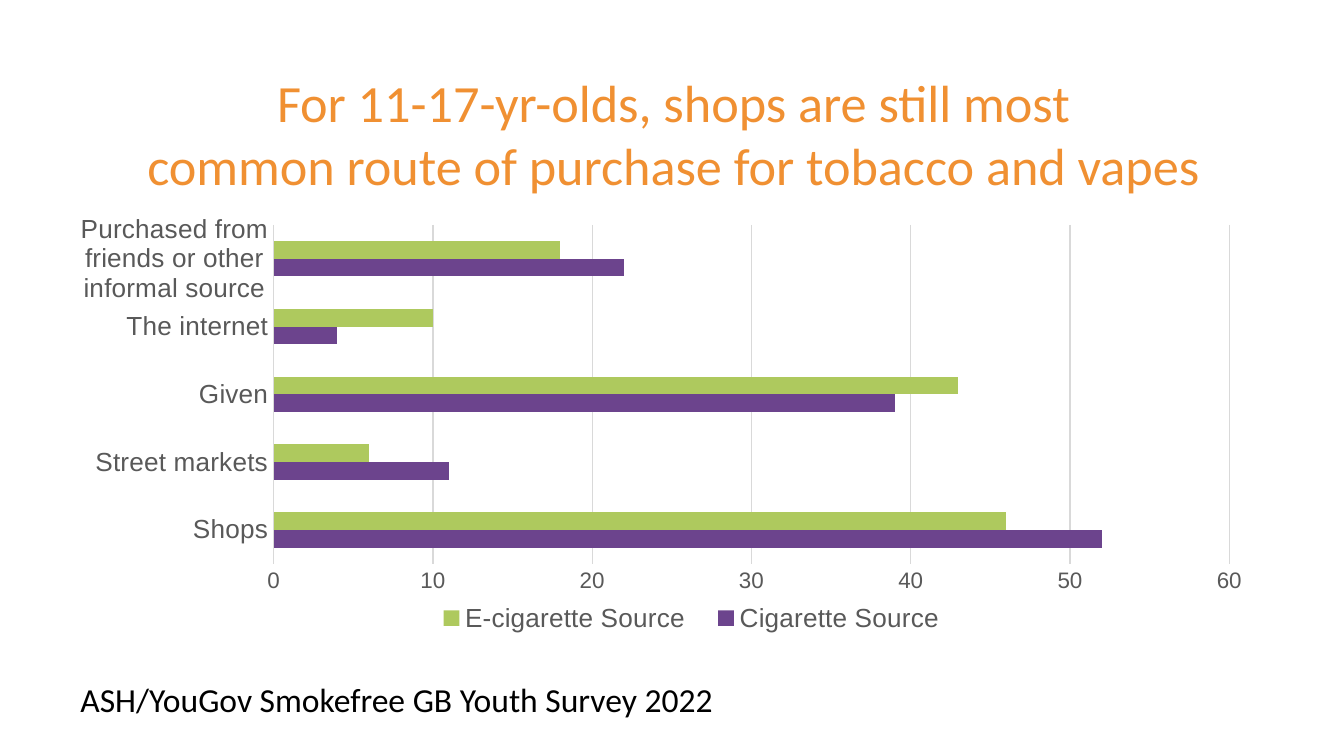
from lxml import etree
from pptx import Presentation
from pptx.chart.data import CategoryChartData
from pptx.dml.color import RGBColor
from pptx.enum.chart import XL_CHART_TYPE, XL_LEGEND_POSITION, XL_TICK_MARK
from pptx.enum.text import MSO_ANCHOR, MSO_AUTO_SIZE, PP_ALIGN
from pptx.oxml.ns import qn
from pptx.util import Inches, Pt

BARS = XL_CHART_TYPE.BAR_CLUSTERED
BOTTOM = XL_LEGEND_POSITION.BOTTOM
NONE = XL_TICK_MARK.NONE
MIDDLE = MSO_ANCHOR.MIDDLE
FIXED = MSO_AUTO_SIZE.NONE
CENTER, LEFT = PP_ALIGN.CENTER, PP_ALIGN.LEFT

WIDE = Inches(10)
HIGH = WIDE * 9 // 16

THEME = {
    "title": ("Calibri", 28, "F09032"),
    "source": ("Calibri", 18, "000000"),
    "chart": ("Arial", 10, "000000"),
    "label": ("Arial", 14, "595959"),
    "scale": ("Arial", 12, "595959"),
    "rule": "D9D9D9",
    "smoke": "6C448D",
    "vape": "AEC95E",
}


def style(font, role):
    name, size, tint = THEME[role]
    font.name, font.size, font.bold = name, Pt(size), False
    font.color.rgb = RGBColor.from_string(tint)


def place(x, y, w, h):
    return [int(side * part / 100) for side, part in zip((WIDE, HIGH) * 2, (x, y, w, h))]


deck = Presentation()
deck.slide_width, deck.slide_height = WIDE, HIGH
slide = deck.slides.add_slide(deck.slide_layouts[5])

title = slide.shapes.title
title.left, title.top, title.width, title.height = place(3.6, 9.3, 93, 16.7)
source = slide.shapes.add_textbox(*place(5, 88.9, 69, 7.1))

texts = [
    (title, "title", CENTER,
     "For 11-17-yr-olds, shops are still most\vcommon route of purchase for tobacco and vapes"),
    (source, "source", LEFT, "ASH/YouGov Smokefree GB Youth Survey 2022"),
]
for box, role, align, words in texts:
    frame = box.text_frame
    form = {"text": words, "word_wrap": True, "auto_size": FIXED, "vertical_anchor": MIDDLE}
    for key, value in form.items():
        setattr(frame, key, value)
    line = frame.paragraphs[0]
    line.alignment = align
    for run in line.runs:
        style(run.font, role)

data = CategoryChartData()
data.categories = ["Shops", "Street markets", "Given", "The internet",
                   "Purchased from friends or other informal source"]
data.add_series("Cigarette Source", (52, 11, 39, 4, 22))
data.add_series("E-cigarette Source", (46, 6, 43, 10, 18))

chart = slide.shapes.add_chart(BARS, *place(4.2, 27.2, 90, 59), data).chart
style(chart.font, "chart")
chart.has_title = False
chart.has_legend = True
plot, legend = chart.plots[0], chart.legend
rows, scale = chart.category_axis, chart.value_axis

ticks = {"major_tick_mark": NONE, "minor_tick_mark": NONE}
forms = [
    (plot, {"gap_width": 182, "vary_by_categories": False}),
    (legend, {"position": BOTTOM, "include_in_layout": False}),
    (rows, {**ticks, "has_major_gridlines": False}),
    (scale, {**ticks, "has_major_gridlines": True, "minimum_scale": 0,
             "maximum_scale": 60, "major_unit": 10}),
]
for part, form in forms:
    for key, value in form.items():
        setattr(part, key, value)

style(legend.font, "label")
style(rows.tick_labels.font, "label")
style(scale.tick_labels.font, "scale")

tree = chart.element.find(".//" + qn("c:legend"))
layout = tree.find(qn("c:layout"))
if layout is None:
    layout = etree.Element(qn("c:layout"))
    tree.find(qn("c:legendPos")).addnext(layout)
manual = etree.SubElement(layout, qn("c:manualLayout"))
spots = {"xMode": "edge", "yMode": "edge", "x": 0.3, "y": 0.88, "w": 0.45, "h": 0.09}
for key, value in spots.items():
    etree.SubElement(manual, qn("c:" + key)).set("val", str(value))

for part in (rows, scale.major_gridlines):
    part.format.line.width = Pt(0.75)
    part.format.line.color.rgb = RGBColor.from_string(THEME["rule"])
scale.format.line.fill.background()

for series, tint in zip(plot.series, ("smoke", "vape")):
    series.format.fill.solid()
    series.format.fill.fore_color.rgb = RGBColor.from_string(THEME[tint])

deck.save("out.pptx")
